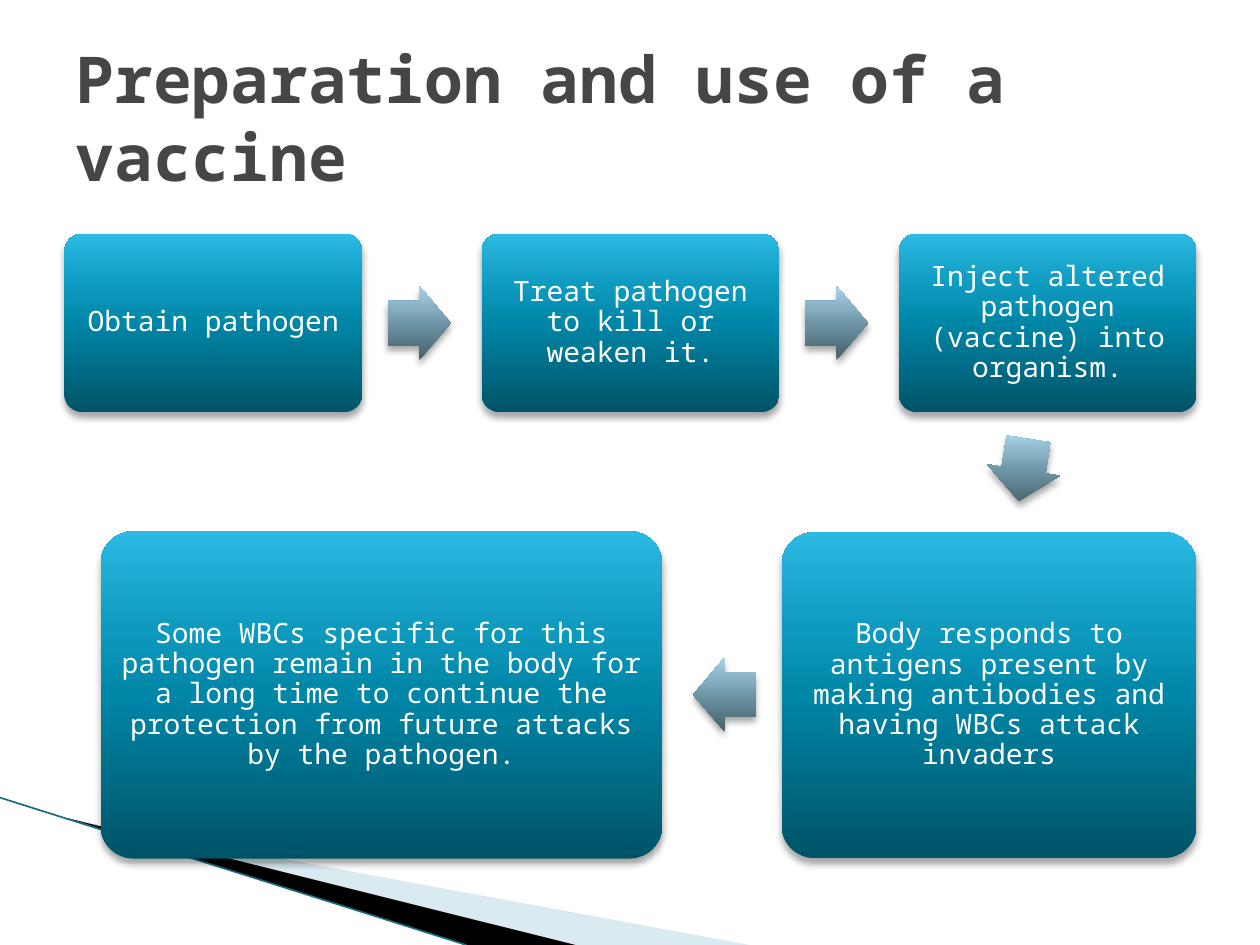
import pptx
import pptx.util
import pptx.oxml
from pptx.dml.color import RGBColor
from pptx.enum.shapes import MSO_CONNECTOR, MSO_SHAPE
from pptx.enum.text import MSO_ANCHOR, MSO_AUTO_SIZE, PP_ALIGN
from pptx.oxml.ns import qn
from pptx.util import Cm, Pt

FONT = "Noto Sans Mono"
NS = 'xmlns:a="http://schemas.openxmlformats.org/drawingml/2006/main"'
WHITE = RGBColor(0xFF, 0xFF, 0xFF)
BLACK = RGBColor(0, 0, 0)
TITLE_GRAY = RGBColor(0x46, 0x46, 0x46)
PALE_BLUE = RGBColor(0xA0, 0xCB, 0xDC)
EDGE_TEAL = RGBColor(0x1B, 0x6B, 0x80)
POSITIONS = (0, 50, 70, 100)
CARD_COLORS = [RGBColor(0x00, 0x53, 0x67), RGBColor(0x00, 0x86, 0xA7),
               RGBColor(0x0E, 0x9A, 0xBE), RGBColor(0x2C, 0xB9, 0xE3)]
ARROW_COLORS = [RGBColor(0x44, 0x5E, 0x68), RGBColor(0x6F, 0x96, 0xA7),
                RGBColor(0x86, 0xAF, 0xC1), RGBColor(0xA6, 0xD5, 0xE9)]


def add_glossy(kind, box, colors, adjustments):
    """Add a shape with an upright gradient and a soft shadow below it."""
    s = slide.shapes.add_shape(kind, *[Cm(v) for v in box])
    for i, value in enumerate(adjustments):
        s.adjustments[i] = value
    s.line.fill.background()
    stops = "".join(f'<a:gs pos="{pos * 1000}"><a:srgbClr val="{color}"/></a:gs>'
                    for pos, color in zip(POSITIONS, colors))
    line = s._element.spPr.find(qn("a:ln"))
    line.addprevious(pptx.oxml.parse_xml(
        f'<a:gradFill {NS} rotWithShape="0"><a:gsLst>{stops}</a:gsLst>'
        '<a:lin ang="16200000" scaled="0"/></a:gradFill>'))
    line.addnext(pptx.oxml.parse_xml(
        f'<a:effectLst {NS}><a:outerShdw blurRad="{Pt(4)}" dist="{Pt(3)}" dir="5400000" '
        'rotWithShape="0"><a:srgbClr val="000000"><a:alpha val="35000"/></a:srgbClr>'
        '</a:outerShdw></a:effectLst>'))
    return s


def add_wedge(points, color):
    """Add a filled outline without border."""
    points = [(Cm(x), Cm(y)) for x, y in points]
    builder = slide.shapes.build_freeform(*points[0])
    builder.add_line_segments(points[1:], close=True)
    s = builder.convert_to_shape()
    s.fill.solid()
    s.fill.fore_color.rgb = color
    s.line.fill.background()
    s.shadow.inherit = False
    return s


prs = pptx.Presentation()
prs.slide_width, prs.slide_height = Cm(25.4), Cm(19.05)
slide = prs.slides.add_slide(prs.slide_layouts[5])

# Corner decoration
pale = add_wedge([(1.4, 16.52), (15.11, 19.05), (11.58, 19.05)], PALE_BLUE)
pale_color = pale._element.spPr.find(qn("a:solidFill"))[0]
pale_color.append(pptx.oxml.parse_xml(f'<a:alpha {NS} val="40000"/>'))
add_wedge([(1.35, 16.49), (11.6, 19.05), (9.4, 19.05)], BLACK)
edge = slide.shapes.add_connector(MSO_CONNECTOR.STRAIGHT, Cm(0), Cm(16.08), Cm(9.4), Cm(19.05))
edge.line.color.rgb = EDGE_TEAL
edge.line.width = Pt(0.95)
edge._element.spPr.append(pptx.oxml.parse_xml(f"<a:effectLst {NS}/>"))

# Title
title = slide.shapes.title
title.left, title.top, title.width, title.height = Cm(1.27), Cm(0.76), Cm(22.86), Cm(3.18)
tf = title.text_frame
tf.text = "Preparation and use of a vaccine"
tf.word_wrap = True
tf.auto_size = MSO_AUTO_SIZE.NONE
tf.vertical_anchor = MSO_ANCHOR.MIDDLE
p = tf.paragraphs[0]
p.alignment = PP_ALIGN.LEFT
for name, value in {"name": FONT, "size": Pt(36.9), "bold": True}.items():
    setattr(p.runs[0].font, name, value)
p.runs[0].font.color.rgb = TITLE_GRAY

# Step cards: three equally spaced on top, two below
LEFT, STEP = 1.3, 8.41
top_texts = ["Obtain pathogen", "Treat pathogen to kill or weaken it.",
             "Inject altered pathogen (vaccine) into organism."]
cards = [(text, (LEFT + i * STEP, 4.71, 6, 3.6)) for i, text in enumerate(top_texts)]
cards += [
    ("Body responds to antigens present by making antibodies and having WBCs "
     "attack invaders", (15.76, 10.73, 8.36, 6.57)),
    ("Some WBCs specific for this pathogen remain in the body for a long time to "
     "continue the protection from future attacks by the pathogen.",
     (2.03, 10.71, 11.32, 6.6)),
]
for text, box in cards:
    s = add_glossy(MSO_SHAPE.ROUNDED_RECTANGLE, box, CARD_COLORS, [0.1])
    tf = s.text_frame
    margins = dict.fromkeys(("margin_left", "margin_right", "margin_top", "margin_bottom"), Cm(0.05))
    for name, value in {"word_wrap": True, "vertical_anchor": MSO_ANCHOR.MIDDLE, **margins}.items():
        setattr(tf, name, value)
    p = tf.paragraphs[0]
    p.alignment = PP_ALIGN.CENTER
    p.line_spacing = 0.9
    r = p.add_run()
    r.text = text
    r.font.name, r.font.size = FONT, Pt(16)
    r.font.color.rgb = WHITE

# Arrows from each step to the next
for x, y, rotation in [(7.82, 5.77, 0), (7.82 + STEP, 5.77, 0),
                       (20, 8.73, 98.9), (13.97, 13.26, 180)]:
    s = add_glossy(MSO_SHAPE.RIGHT_ARROW, (x, y, 1.27, 1.49), ARROW_COLORS, [0.6, 0.5])
    s.rotation = rotation

prs.save("out.pptx")
